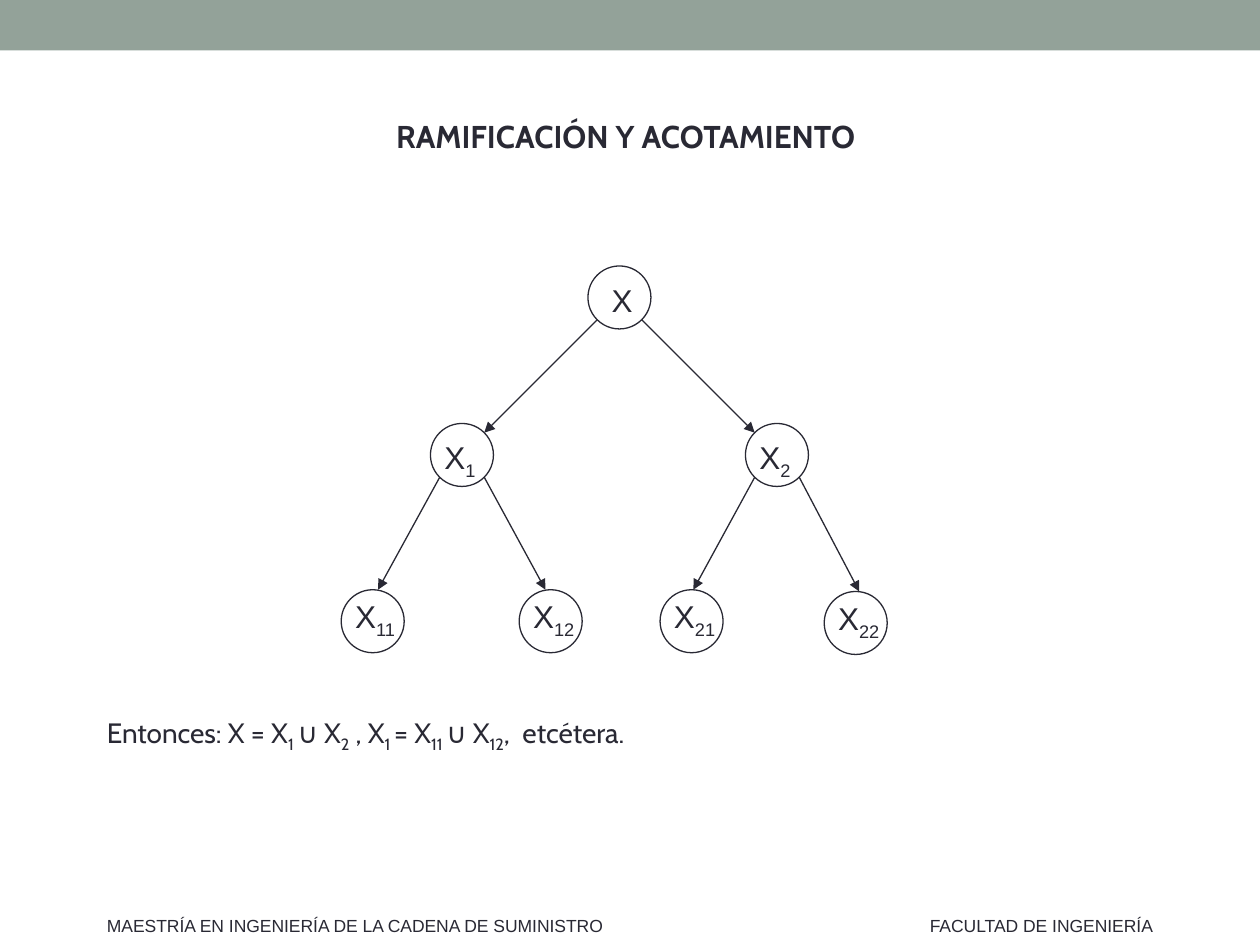
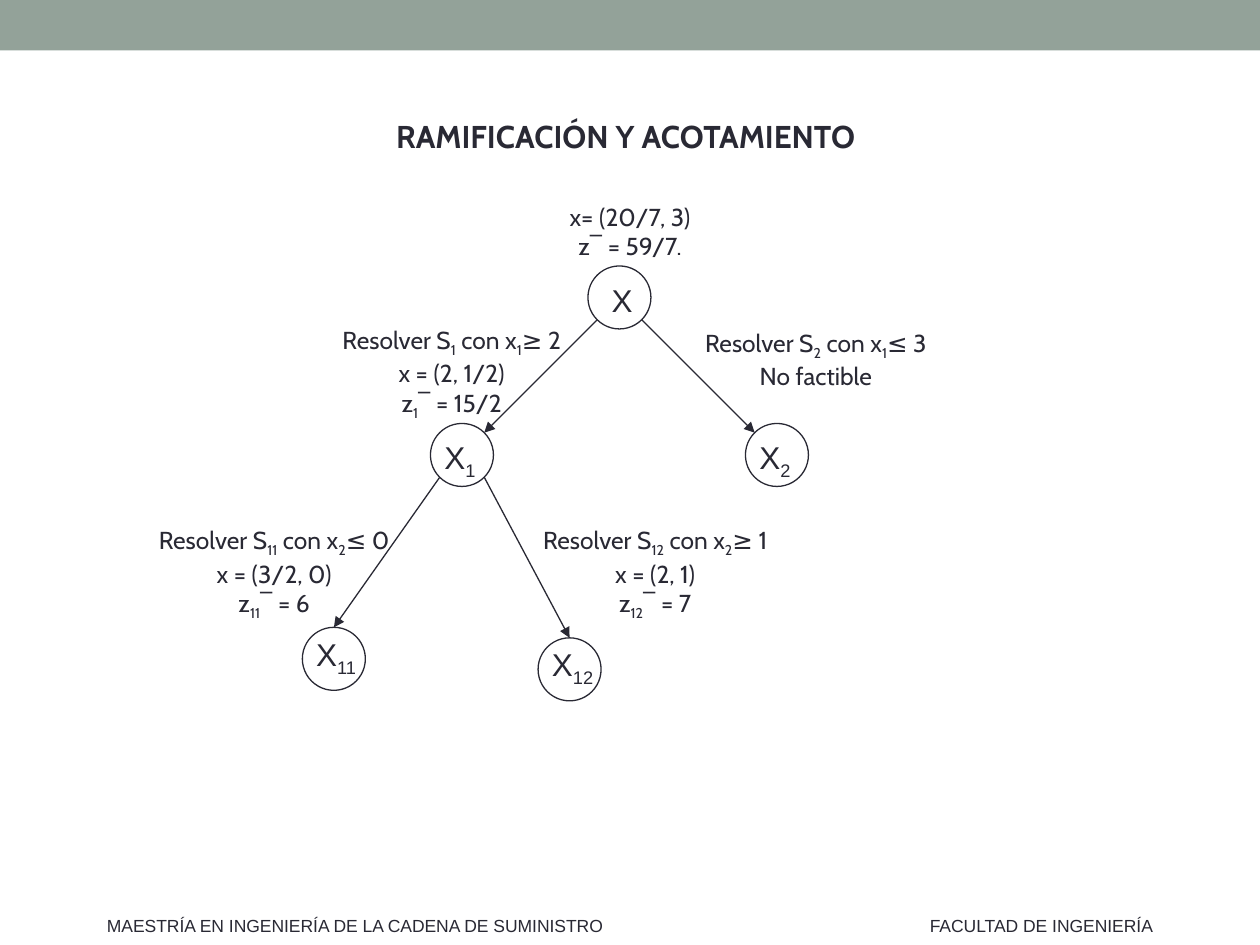
from dataclasses import dataclass
from math import sqrt

from lxml.etree import SubElement
from pptx import Presentation
from pptx.dml.color import RGBColor
from pptx.enum.shapes import MSO_CONNECTOR, MSO_SHAPE
from pptx.enum.text import PP_ALIGN
from pptx.oxml.ns import qn
from pptx.slide import Slide
from pptx.text.text import TextFrame
from pptx.util import Pt

INK = RGBColor(0x29, 0x29, 0x34)
SAGE = RGBColor(0x93, 0xA2, 0x99)
HEADING_FONT, LABEL_FONT = "Cabin", "Arial"

PAGE_WIDTH, PAGE_HEIGHT = 720, 540
MARGIN = 54
RADIUS = 18
CORNER = RADIUS * sqrt(0.5)
# Label offset from the node centre and label width, by tree level
LABEL_PLACES = [(-11.5, -13, 26.6), (-17.2, -13.3, 33), (-17.2, -17.2, 40)]


@dataclass
class Node:
    index: str  # one digit per level below the root
    x: float
    y: float
    lean: float = 0  # sideways shift of the arrow tip on a leaf


@dataclass
class Note:
    left: float
    top: float
    width: float
    lines: list[str]


@dataclass
class Footer:
    left: float
    width: float
    text: str


FOOTERS = [
    Footer(524.2, 145.4, "FACULTAD DE INGENIERÍA"),
    Footer(MARGIN, 303, "MAESTRÍA EN INGENIERÍA DE LA CADENA DE SUMINISTRO"),
]
TREE_TOP = [Node("", 354, 170), Node("1", 264, 260), Node("2", 444, 260)]
FULL_LEAVES = [
    Node("11", 213, 355, 3),
    Node("12", 314.7, 355, -3),
    Node("21", 395.2, 355, 1),
    Node("22", 489, 356, 2),
]
SOLVED_LEAVES = [Node("11", 190.8, 376.5), Node("12", 325.5, 382.5)]

# Text between bars is set as a subscript
CONCLUSION = Note(MARGIN, 405.6, 400, [
    "Entonces: X = X|1 |∪ X|2| , X|1 |= X|11 |∪ X|12|,  etcétera."])
NOTES = [
    Note(314.6, 111.6, 90.8, ["x= (20/7, 3)", "z¯ = 59/7."]),
    Note(184.3, 182.2, 147.6,
         ["Resolver S|1| con x|1|≥ 2", "x = (2, 1/2)", "z|1|¯ = 15/2"]),
    Note(392.4, 183.6, 147.6, ["Resolver S|2| con x|1|≤ 3", "No factible"]),
    Note(77.8, 296.6, 157.7,
         ["Resolver S|11| con x|2|≤ 0", "x = (3/2, 0)", "z|11|¯ = 6"]),
    Note(298.1, 296.6, 152.6,
         ["Resolver S|12| con x|2|≥ 1", "x = (2, 1)", "z|12|¯ = 7"]),
]


def add_text(page: Slide, note: Note, font: str, size: float,
             align: PP_ALIGN = PP_ALIGN.LEFT, bold: bool = False) -> TextFrame:
    height = len(note.lines) * size * 1.2 + 7.2
    box = page.shapes.add_textbox(
        Pt(note.left), Pt(note.top), Pt(note.width), Pt(height))
    frame = box.text_frame
    frame.word_wrap = False
    for number, line in enumerate(note.lines):
        para = frame.add_paragraph() if number else frame.paragraphs[0]
        para.alignment = align
        para.font.name, para.font.size = font, Pt(size)
        para.font.bold, para.font.color.rgb = bold, INK
        for position, part in enumerate(line.split("|")):
            if not part:
                continue
            span = para.add_run()
            span.text = part
            if position % 2:
                span._r.get_or_add_rPr().set("baseline", "-25000")
    return frame


def add_arrow(page: Slide, parent: Node, child: Node) -> None:
    side = 1 if child.x > parent.x else -1
    if len(child.index) == 1:
        tip_x, tip_y = child.x - side * CORNER, child.y - CORNER
    else:
        tip_x, tip_y = child.x + child.lean, child.y - RADIUS
    arrow = page.shapes.add_connector(
        MSO_CONNECTOR.STRAIGHT, Pt(parent.x + side * CORNER),
        Pt(parent.y + CORNER), Pt(tip_x), Pt(tip_y))
    arrow.line.color.rgb, arrow.line.width = INK, Pt(0.75)
    properties = arrow._element.spPr
    SubElement(properties.find(qn("a:ln")), qn("a:tailEnd"), type="triangle")
    SubElement(properties, qn("a:effectLst"))


def add_node(page: Slide, node: Node) -> None:
    circle = page.shapes.add_shape(
        MSO_SHAPE.FLOWCHART_CONNECTOR, Pt(node.x - RADIUS),
        Pt(node.y - RADIUS), Pt(2 * RADIUS), Pt(2 * RADIUS))
    circle.shadow.inherit = False
    circle.fill.background()
    circle.line.color.rgb, circle.line.width = INK, Pt(0.75)
    right, down, width = LABEL_PLACES[len(node.index)]
    label = Note(node.x + right, node.y + down, width, [f"X|{node.index}"])
    add_text(page, label, LABEL_FONT, 18)


def add_tree(page: Slide, nodes: list[Node]) -> None:
    by_index = {node.index: node for node in nodes}
    for node in nodes:
        add_node(page, node)
        if node.index:
            add_arrow(page, by_index[node.index[:-1]], node)


def add_page(deck: Presentation) -> Slide:
    page = deck.slides.add_slide(deck.slide_layouts[6])
    # Top band
    band = page.shapes.add_shape(
        MSO_SHAPE.RECTANGLE, 0, 0, Pt(PAGE_WIDTH), Pt(28.8))
    band.shadow.inherit = False
    band.fill.solid()
    band.fill.fore_color.rgb = SAGE
    band.line.fill.background()
    # Title
    title = Note(MARGIN, 54.7, 607, ["RAMIFICACIÓN Y ACOTAMIENTO"])
    frame = add_text(page, title, HEADING_FONT, 18, PP_ALIGN.CENTER, True)
    frame.paragraphs[0].line_spacing = 1.4
    frame.paragraphs[0].space_before = Pt(3.6)
    # Footers
    for footer in FOOTERS:
        add_text(page, Note(footer.left, 519.1, footer.width, [footer.text]),
                 LABEL_FONT, 10)
    return page


def main() -> None:
    deck = Presentation()
    deck.slide_width, deck.slide_height = Pt(PAGE_WIDTH), Pt(PAGE_HEIGHT)

    # Full tree with its conclusion
    page = add_page(deck)
    add_tree(page, TREE_TOP + FULL_LEAVES)
    add_text(page, CONCLUSION, HEADING_FONT, 16)

    # Solved example with a note at each node
    page = add_page(deck)
    add_tree(page, TREE_TOP + SOLVED_LEAVES)
    for note in NOTES:
        add_text(page, note, HEADING_FONT, 14, PP_ALIGN.CENTER)

    deck.save("out.pptx")


if __name__ == "__main__":
    main()
